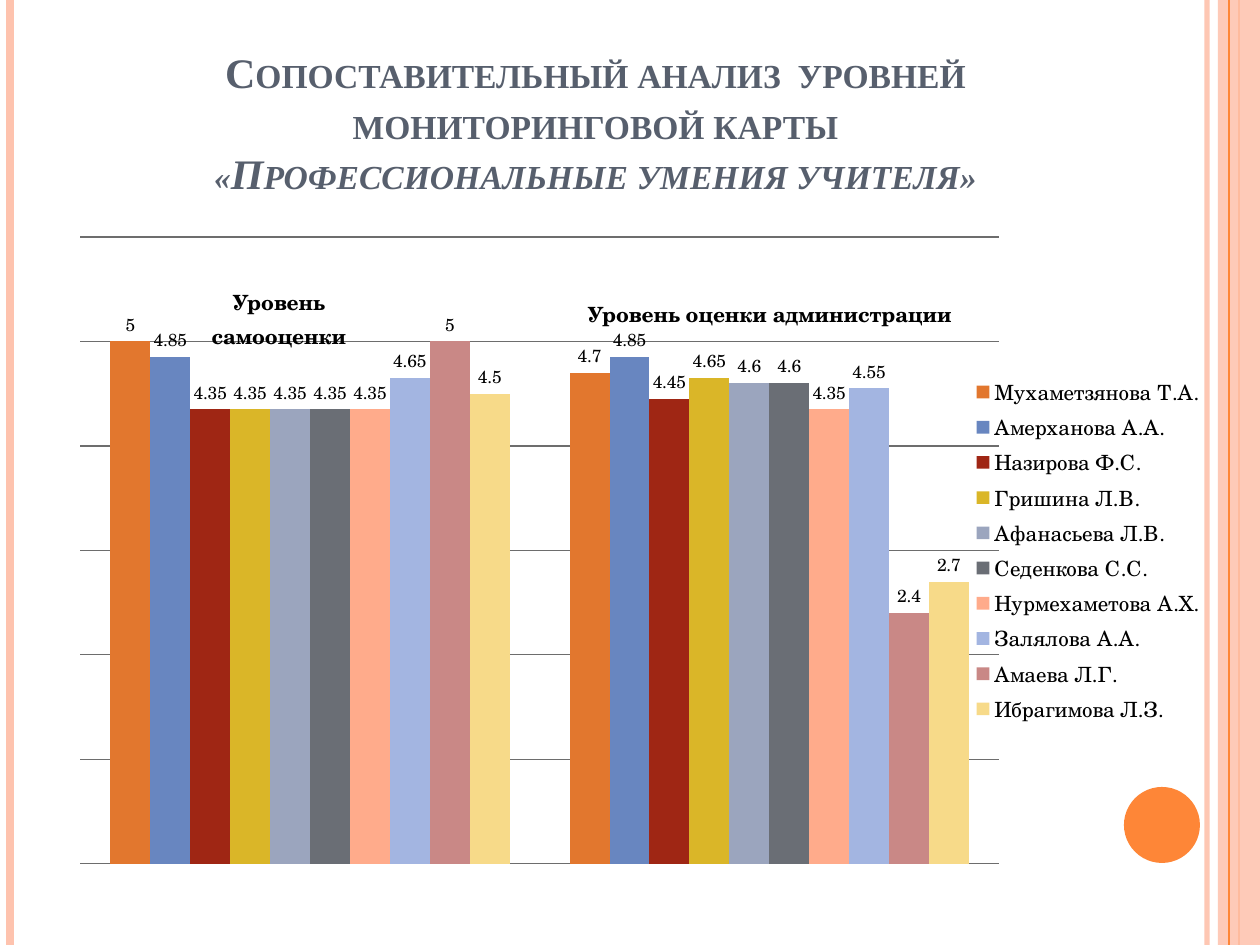
from lxml import etree
from pptx import Presentation
from pptx.chart.data import CategoryChartData
from pptx.dml.color import RGBColor
from pptx.enum import chart as ch, shapes, text
from pptx.oxml import parse_xml
from pptx.oxml.ns import nsdecls, qn
from pptx.util import Pt

PX = 914400 / 126
W, H = 1260, 945
TITLE_FONT, CHART_FONT = "Times New Roman", "TeX Gyre Schola"
COLORS = {"peach": "FEC3AE", "orange": "FE8637", "title": "575F6D",
          "black": "000000", "grid": "6D6D6D"}
TEACHERS = [
    ("Мухаметзянова Т.А.", (5, 4.7), "E2772E"),
    ("Амерханова А.А.", (4.85, 4.85), "6886C0"),
    ("Назирова Ф.С.", (4.35, 4.45), "9F2614"),
    ("Гришина Л.В.", (4.35, 4.65), "DAB628"),
    ("Афанасьева Л.В.", (4.35, 4.6), "9BA5BE"),
    ("Седенкова С.С.", (4.35, 4.6), "6A6E75"),
    ("Нурмехаметова А.Х.", (4.35, 4.35), "FFAB8B"),
    ("Залялова А.А.", (4.65, 4.55), "A3B5E1"),
    ("Амаева Л.Г.", (5, 2.4), "C98886"),
    ("Ибрагимова Л.З.", (4.5, 2.7), "F7DA89"),
]


def px(*values):
    return [round(v * PX) for v in values]


def rgb(value):
    return RGBColor.from_string(value)


def set_alpha(sp, percent):
    color = next(sp._element.spPr.iter(qn("a:srgbClr")))
    etree.SubElement(color, qn("a:alpha")).set("val", str(percent * 1000))


def add_rule(s, x, top, height, color, width, alpha=100):
    line = s.shapes.add_connector(shapes.MSO_CONNECTOR.STRAIGHT, *px(x, top, x, top + height))
    line.line.color.rgb = rgb(COLORS[color])
    line.line.width = Pt(width)
    etree.SubElement(line._element.spPr, qn("a:effectLst"))
    if alpha < 100:
        set_alpha(line, alpha)


def add_filled(s, kind, box, color):
    sp = s.shapes.add_shape(kind, *px(*box))
    sp.shadow.inherit = False
    sp.fill.solid()
    sp.fill.fore_color.rgb = rgb(COLORS[color])
    sp.line.fill.background()
    return sp


def add_frame(s, box):
    x, y, w, h = box
    right = x + w
    add_rule(s, right - 53, y, h, "peach", 3, 93)
    add_rule(s, x + 10, y, h, "peach", 4.5)
    add_rule(s, right - 21, y, h, "orange", 1.5)
    band = add_filled(s, shapes.MSO_SHAPE.RECTANGLE, (right - 42, y, 42, h), "peach")
    set_alpha(band, 87)
    add_rule(s, right - 31, y, h, "orange", 0.75)
    add_filled(s, shapes.MSO_SHAPE.OVAL, (right - 136, y + h - 158, 76, 76), "orange")


def add_text(s, box, lines, font, size, color, anchor):
    tf = s.shapes.add_textbox(*px(*box)).text_frame
    tf.word_wrap = True
    tf.vertical_anchor = anchor
    tf.margin_left = tf.margin_right = tf.margin_top = tf.margin_bottom = 0
    for i, line in enumerate(lines):
        p = tf.paragraphs[0] if i == 0 else tf.add_paragraph()
        p.text = line
        p.alignment = text.PP_ALIGN.CENTER
        p.font.name = font
        p.font.size = Pt(size)
        p.font.bold = True
        p.font.color.rgb = rgb(color)
    return tf


def add_title(s, box):
    lines = ["Сопоставительный анализ  уровней", "мониторинговой карты",
             "«Профессиональные умения учителя»"]
    tf = add_text(s, box, lines, TITLE_FONT, 24, COLORS["title"], text.MSO_ANCHOR.BOTTOM)
    tf.paragraphs[-1].font.italic = True
    for p in tf.paragraphs:
        p.font._element.set("cap", "small")


def set_plot_layout(chart, x, y, w, h):
    area = chart._chartSpace.chart.plotArea
    for old in area.findall(qn("c:layout")):
        area.remove(old)
    area.insert(0, parse_xml(
        f'<c:layout {nsdecls("c")}><c:manualLayout><c:layoutTarget val="inner"/>'
        '<c:xMode val="edge"/><c:yMode val="edge"/>'
        f'<c:x val="{x}"/><c:y val="{y}"/><c:w val="{w}"/><c:h val="{h}"/>'
        '</c:manualLayout></c:layout>'))


def add_score_chart(s, box):
    data = CategoryChartData()
    data.categories = ["1", "2"]
    for name, scores, _ in TEACHERS:
        data.add_series(name, scores)
    chart = s.shapes.add_chart(ch.XL_CHART_TYPE.COLUMN_CLUSTERED, *px(*box), data).chart
    chart.has_title = False
    chart.font.name = CHART_FONT
    chart.font.size = Pt(10)
    chart.font.color.rgb = rgb(COLORS["black"])
    chart.category_axis.visible = False
    axis = chart.value_axis
    axis.visible = False
    axis.minimum_scale, axis.maximum_scale, axis.major_unit = 0, 6, 1
    axis.has_major_gridlines = True
    axis.major_gridlines.format.line.color.rgb = rgb(COLORS["grid"])
    axis.major_gridlines.format.line.width = Pt(0.75)
    chart.has_legend = True
    chart.legend.position = ch.XL_LEGEND_POSITION.RIGHT
    chart.legend.include_in_layout = True
    chart.legend.font.size = Pt(12)
    chart.legend.font.name = CHART_FONT
    plot = chart.plots[0]
    plot.vary_by_categories = False
    plot.gap_width, plot.overlap = 150, 0
    for series, (_, _, color) in zip(plot.series, TEACHERS):
        series.format.fill.solid()
        series.format.fill.fore_color.rgb = rgb(color)
        series.data_labels.show_value = True
        series.data_labels.position = ch.XL_LABEL_POSITION.OUTSIDE_END
    set_plot_layout(chart, 0.01, 0.03, 0.8, 0.94)


def add_group_heading(s, box, lines):
    tf = add_text(s, box, lines, CHART_FONT, 12, COLORS["black"], text.MSO_ANCHOR.MIDDLE)
    for p in tf.paragraphs:
        p.line_spacing = Pt(19)


def main():
    prs = Presentation()
    prs.slide_width, prs.slide_height = px(W, H)
    s = prs.slides.add_slide(prs.slide_layouts[6])
    add_frame(s, (0, 0, W, H))
    add_title(s, (0, 48, 1191, 150))
    add_score_chart(s, (69, 217, 1148, 667))
    add_group_heading(s, (179, 280, 200, 70), ["Уровень", "самооценки"])
    add_group_heading(s, (570, 290, 400, 40), ["Уровень оценки администрации"])
    prs.save("out.pptx")


if __name__ == "__main__":
    main()
